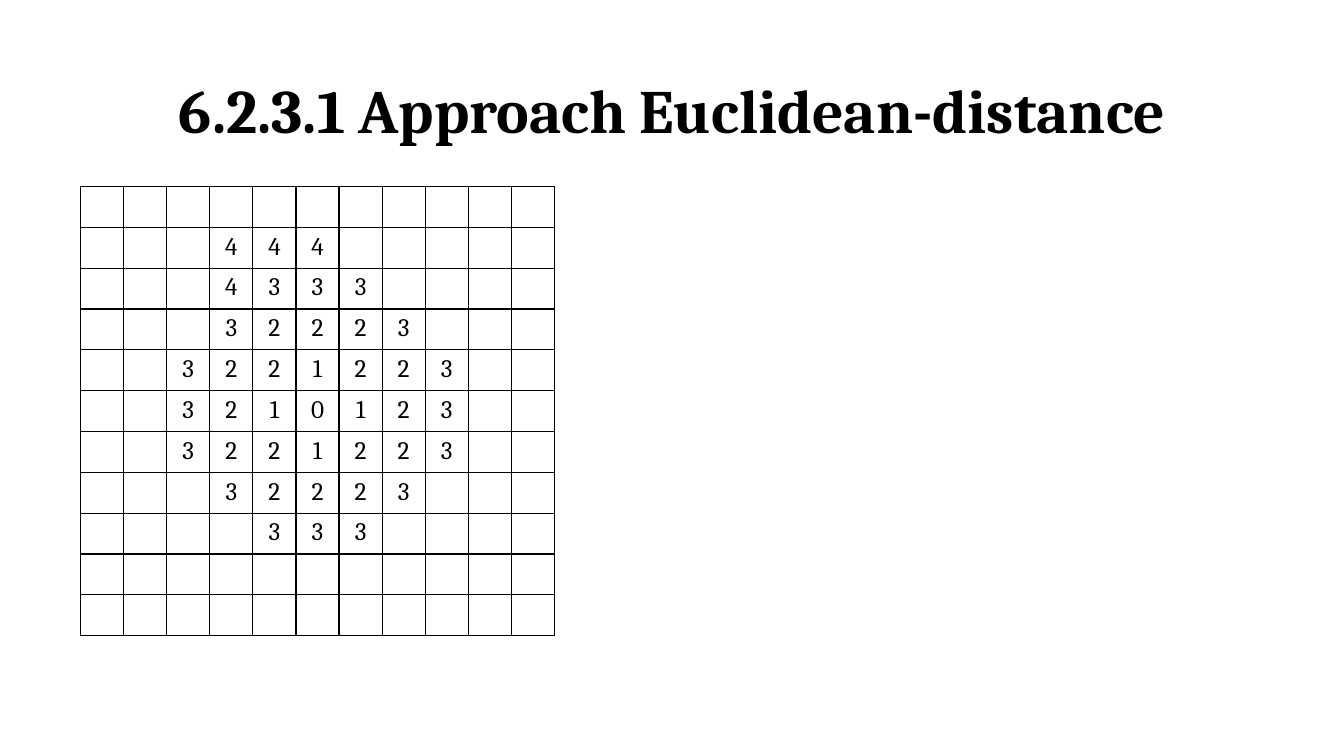
import pptx
import pptx.util
import pptx.dml.color
import pptx.enum.text
import pptx.oxml.ns
import lxml.etree

WIDE, HIGH = 13.33, 7.5
INK = "000000"
FONT = "Cambria"
INCH = pptx.util.Inches
ALIGN = pptx.enum.text.PP_ALIGN
ANCHOR = pptx.enum.text.MSO_ANCHOR

# Distance of each cell from the centre; a dot is an empty cell
GRID = """
...........
...444.....
...4333....
...32223...
..3221223..
..3210123..
..3221223..
...32223...
....333....
...........
...........
""".split()


def tint(code):
    return pptx.dml.color.RGBColor.from_string(code)


def write(frame, text, size, bold=False):
    para = frame.paragraphs[0]
    para.alignment = ALIGN.CENTER
    run = para.add_run()
    run.text = text
    style = {"name": FONT, "size": pptx.util.Pt(size), "bold": bold}
    for key, value in style.items():
        setattr(run.font, key, value)
    run.font.color.rgb = tint(INK)
    return para


def title(slide, text, left, top, width, height):
    box = slide.shapes.add_textbox(INCH(left), INCH(top), INCH(width), INCH(height))
    frame = box.text_frame
    frame.word_wrap = True
    frame.vertical_anchor = ANCHOR.MIDDLE
    write(frame, text, 44, True).line_spacing = 0.9


def border(cell, points=1):
    """Rule all four sides of a cell."""
    props = cell._tc.get_or_add_tcPr()
    name = pptx.oxml.ns.qn
    for side in "LRTB":
        line = lxml.etree.SubElement(props, name(f"a:ln{side}"), w=str(pptx.util.Pt(points)))
        fill = lxml.etree.SubElement(line, name("a:solidFill"))
        lxml.etree.SubElement(fill, name("a:srgbClr"), val=INK)


def matrix(slide, rows, left, top, width, height):
    """Draw strings as a ruled table, one character a cell."""
    count, span = len(rows), len(rows[0])
    frame = slide.shapes.add_table(
        count, span, INCH(left), INCH(top), INCH(width), INCH(height))
    table = frame.table
    table.first_row = table.horz_banding = False
    for col in table.columns:
        col.width = INCH(width / span)
    for row in table.rows:
        row.height = INCH(height / count)
    for cell, mark in zip(table.iter_cells(), "".join(rows)):
        border(cell)
        cell.fill.background()
        if mark != ".":
            write(cell.text_frame, mark, 18)


def main():
    deck = pptx.Presentation()
    deck.slide_width, deck.slide_height = INCH(WIDE), INCH(HIGH)
    slide = deck.slides.add_slide(deck.slide_layouts[6])
    edge = 0.06 * WIDE
    title(slide, "6.2.3.1 Approach Euclidean-distance",
          0.92, 0.4, 11.5, 1.45)
    matrix(slide, GRID, edge, 1.85, 4.7, 4.46)
    deck.save("out.pptx")


if __name__ == "__main__":
    main()
